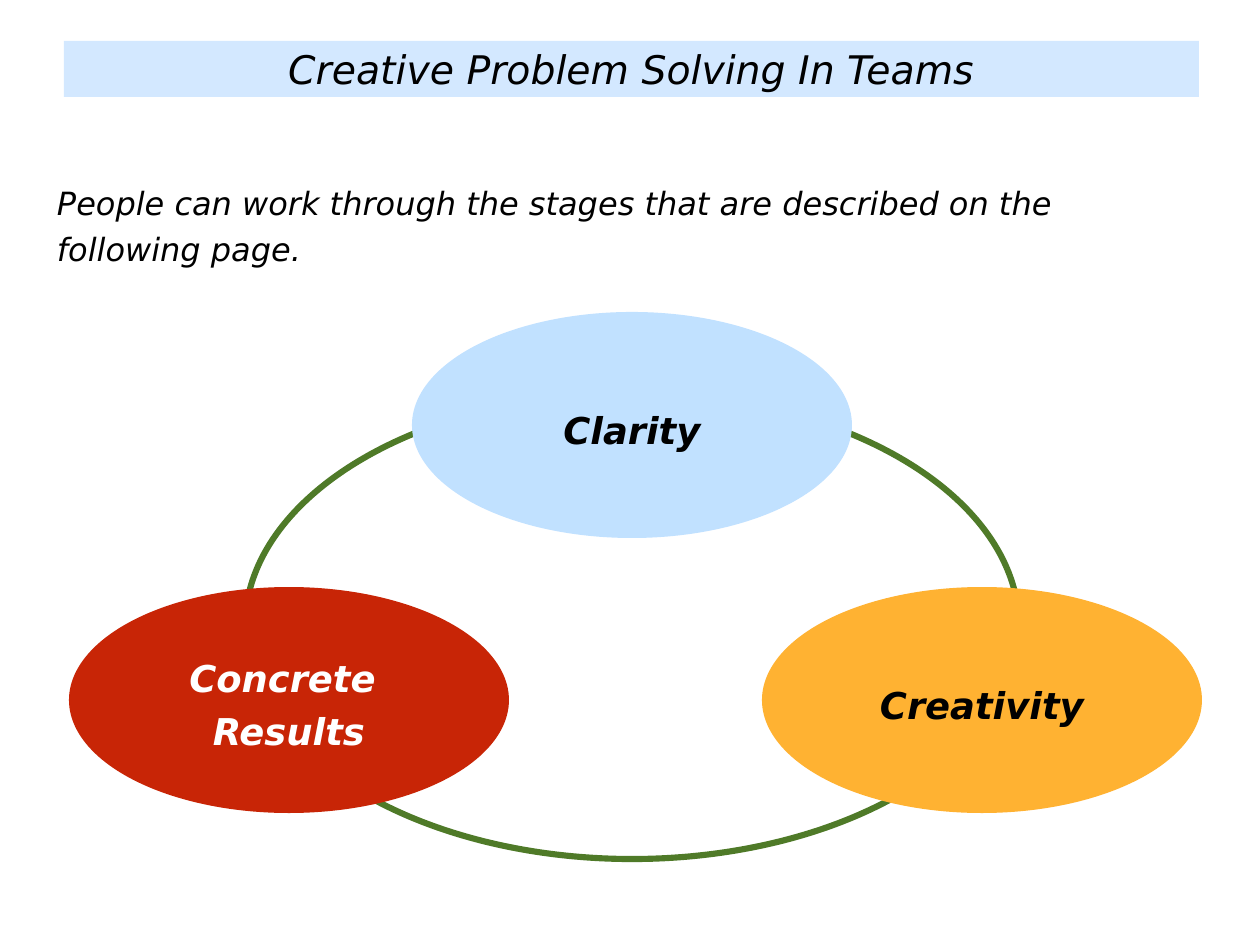
"""Build the slide on creative problem solving in teams."""
from pptx import Presentation
from pptx.dml.color import RGBColor
from pptx.enum.shapes import MSO_SHAPE as SHAPE
from pptx.enum.text import MSO_ANCHOR as ANCHOR, PP_ALIGN as ALIGN
from pptx.util import Pt

BLACK = RGBColor(0x00, 0x00, 0x00)
WHITE = RGBColor(0xFF, 0xFF, 0xFF)
PALE_BLUE = RGBColor(0xD3, 0xE8, 0xFF)
SKY = RGBColor(0xC1, 0xE1, 0xFF)
ORANGE = RGBColor(0xFF, 0xB2, 0x32)
RED = RGBColor(0xC8, 0x25, 0x06)
GREEN = RGBColor(0x4F, 0x7A, 0x28)

FONT = "DejaVu Sans"
TITLE = "Creative Problem Solving In Teams"
INTRO = "People can work through the stages that are described on the following page."
STAGE_W, STAGE_H = 440, 226
STAGES = [
    (["Clarity"], 412, 312, SKY, BLACK),
    (["Creativity"], 762, 587, ORANGE, BLACK),
    (["Concrete ", "Results"], 69, 587, RED, WHITE),
]
SCALE = 914400 / 88.6


def px(*lengths):
    return [round(n * SCALE) for n in lengths]


def write(sp, lines, size, color=BLACK, bold=False, align=ALIGN.CENTER,
          anchor=ANCHOR.TOP, spacing=1.0, inset=4):
    tf = sp.text_frame
    tf.word_wrap = True
    tf.vertical_anchor = anchor
    tf.margin_left, tf.margin_top, tf.margin_right, tf.margin_bottom = px(*[inset] * 4)
    for i, line in enumerate(lines):
        p = tf.add_paragraph() if i else tf.paragraphs[0]
        p.alignment, p.line_spacing = align, spacing
        r = p.add_run()
        r.text = line
        r.font.name, r.font.size = FONT, Pt(size)
        r.font.bold, r.font.italic = bold, True
        r.font.color.rgb = color


def add_shape(s, kind, box, fill, line=None):
    sp = s.shapes.add_shape(kind, *px(*box))
    sp.shadow.inherit = False
    sp.fill.solid()
    sp.fill.fore_color.rgb = fill
    if line is None:
        sp.line.fill.background()
    else:
        sp.line.color.rgb = line
        sp.line.width = Pt(5)
    return sp


def main():
    prs = Presentation()
    prs.slide_width, prs.slide_height = px(1260, 945)
    s = prs.slides.add_slide(prs.slide_layouts[6])

    intro = s.shapes.add_textbox(*px(53, 172, 1153, 91))
    write(intro, [INTRO], 26, align=ALIGN.LEFT, spacing=1.2)
    add_shape(s, SHAPE.OVAL, (245, 393, 774, 466), WHITE, GREEN)
    title = add_shape(s, SHAPE.RECTANGLE, (64, 41, 1135, 56), PALE_BLUE)
    write(title, [TITLE], 32)
    for lines, x, y, fill, color in STAGES:
        stage = add_shape(s, SHAPE.OVAL, (x, y, STAGE_W, STAGE_H), fill)
        write(stage, lines, 30, color=color, bold=True,
              anchor=ANCHOR.MIDDLE, spacing=1.2, inset=5)
    prs.save("out.pptx")


if __name__ == "__main__":
    main()
